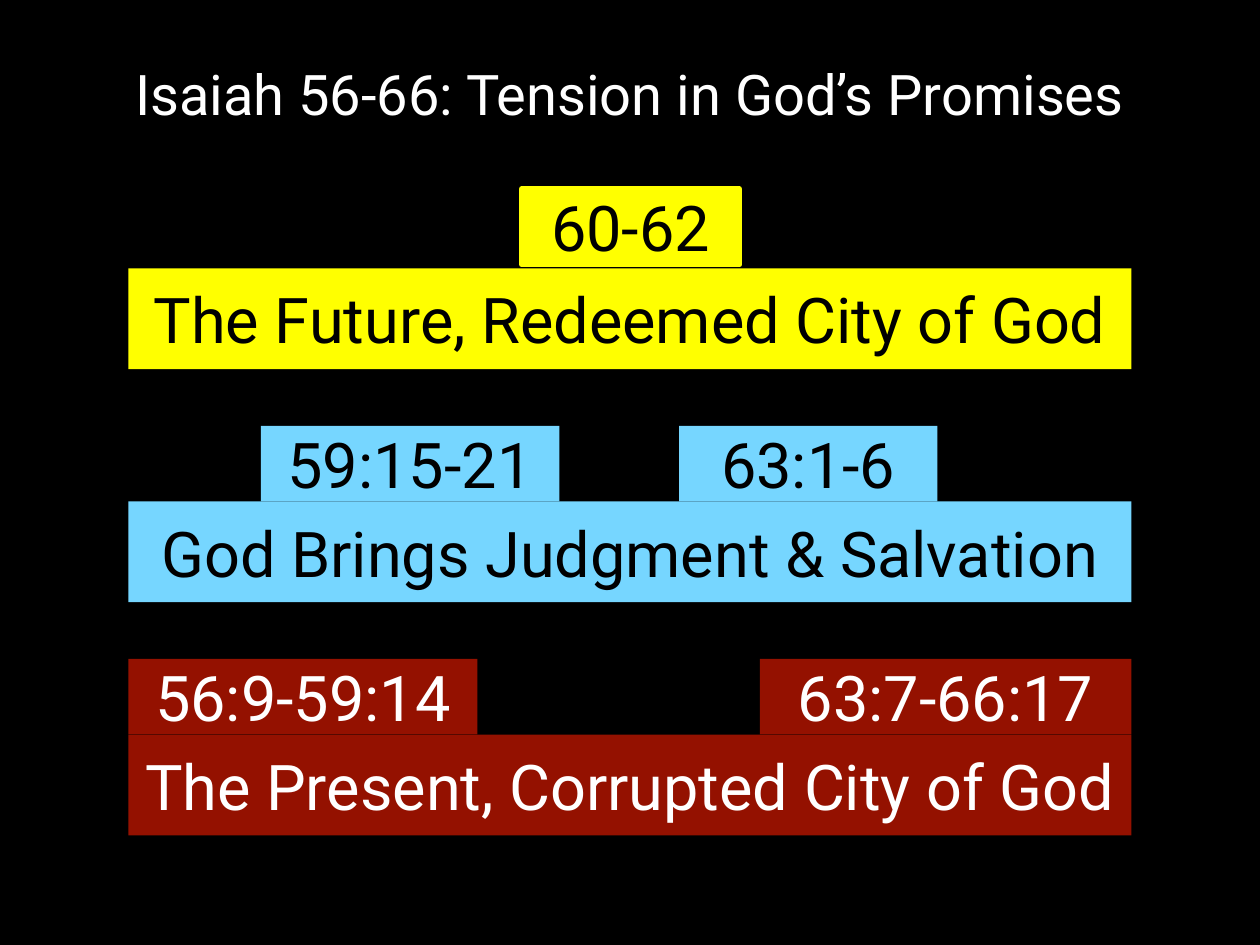
from pptx import Presentation
from pptx.dml.color import RGBColor
from pptx.enum.shapes import MSO_SHAPE
from pptx.enum.text import MSO_ANCHOR, PP_ALIGN
from pptx.util import Inches, Pt

BLACK = RGBColor(0x00, 0x00, 0x00)
WHITE = RGBColor(0xFF, 0xFF, 0xFF)
YELLOW = RGBColor(0xFF, 0xFF, 0x00)
BLUE = RGBColor(0x76, 0xD6, 0xFF)
RED = RGBColor(0x94, 0x11, 0x00)

TITLE = "Isaiah 56-66: Tension in God’s Promises"
# Each tier: bar text, fill, text colour, tab outline (pt), tabs as (text, left, width)
TIERS = [
    ("The Future, Redeemed City of God", YELLOW, BLACK, 3,
     [("60-62", 4.14, 1.73)]),
    ("God Brings Judgment & Salvation", BLUE, BLACK, 0,
     [("59:15-21", 2.07, 2.37), ("63:1-6", 5.39, 2.05)]),
    ("The Present, Corrupted City of God", RED, WHITE, 0,
     [("56:9-59:14", 1.02, 2.77), ("63:7-66:17", 6.03, 2.95)]),
]

BAR_LEFT, BAR_W, BAR_H = 1.02, 7.96, 0.8
FIRST_BAR_TOP, TIER_PITCH = 2.13, 1.85
TAB_H = 0.6


def write(sp, text, size=36, color=BLACK, spacing=None):
    tf = sp.text_frame
    tf.word_wrap = True
    tf.vertical_anchor = MSO_ANCHOR.MIDDLE
    p = tf.paragraphs[0]
    p.alignment = PP_ALIGN.CENTER
    if spacing:
        p.line_spacing = spacing
    r = p.add_run()
    r.text = text
    r.font.name = "Roboto"
    r.font.size = Pt(size)
    r.font.color.rgb = color


def add_block(slide, text, box, fill, color, outline=0):
    sp = slide.shapes.add_shape(MSO_SHAPE.RECTANGLE, *map(Inches, box))
    sp.shadow.inherit = False
    sp.fill.solid()
    sp.fill.fore_color.rgb = fill
    if outline:
        sp.line.color.rgb = fill
        sp.line.width = Pt(outline)
    else:
        sp.line.fill.background()
    write(sp, text, color=color)


def main():
    prs = Presentation()
    prs.slide_width, prs.slide_height = Inches(10), Inches(7.5)
    slide = prs.slides.add_slide(prs.slide_layouts[5])
    slide.background.fill.solid()
    slide.background.fill.fore_color.rgb = BLACK

    title = slide.shapes.title
    title.left, title.top = Inches(0.69), Inches(0.37)
    title.width, title.height = Inches(8.62), Inches(0.81)
    write(title, TITLE, size=32, color=WHITE, spacing=0.9)

    for i, (text, fill, color, outline, tabs) in enumerate(TIERS):
        bar_top = FIRST_BAR_TOP + i * TIER_PITCH
        # An outlined tab is raised so that its line stays clear of the bar
        tab_top = bar_top - TAB_H - outline / 100
        for tab, left, width in tabs:
            add_block(slide, tab, (left, tab_top, width, TAB_H), fill, color, outline)
        add_block(slide, text, (BAR_LEFT, bar_top, BAR_W, BAR_H), fill, color)

    prs.save("out.pptx")


if __name__ == "__main__":
    main()
